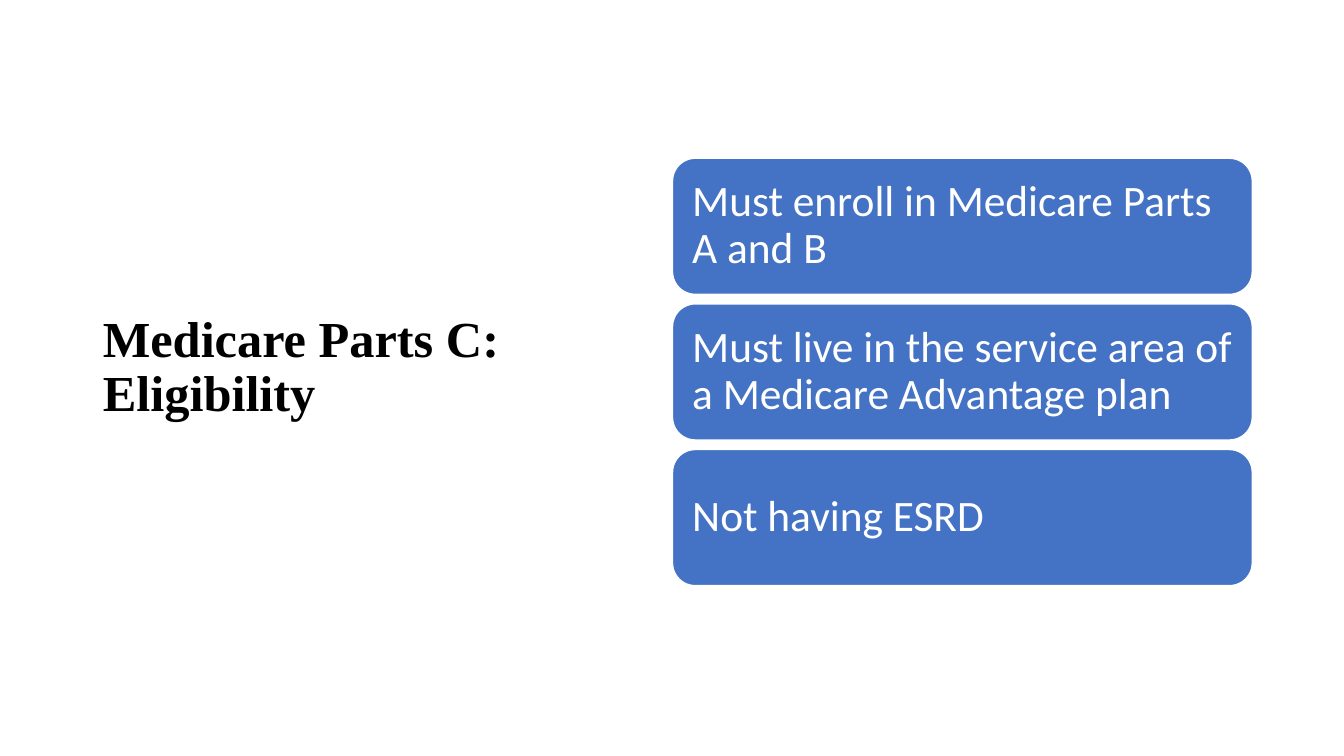
from pptx import Presentation
from pptx.dml.color import RGBColor
from pptx.enum.shapes import MSO_SHAPE
from pptx.enum.text import MSO_ANCHOR, MSO_AUTO_SIZE, PP_ALIGN
from pptx.util import Inches, Pt

BLACK = RGBColor(0x00, 0x00, 0x00)
WHITE = RGBColor(0xFF, 0xFF, 0xFF)
BLUE = RGBColor(0x44, 0x72, 0xC4)

REQUIREMENTS = [
    "Must enroll in Medicare Parts A and B",
    "Must live in the service area of a Medicare Advantage plan",
    "Not having ESRD",
]
CARD_LEFT, CARD_TOP = 6.67, 1.57
CARD_WIDTH, CARD_HEIGHT = 5.75, 1.35
CARD_PITCH = 1.445


def write_text(shape, text, *, font, size, color, bold=False):
    """Fill the shape with one left-aligned, vertically centred paragraph."""
    frame = shape.text_frame
    frame.word_wrap = True
    frame.auto_size = MSO_AUTO_SIZE.NONE
    frame.vertical_anchor = MSO_ANCHOR.MIDDLE
    paragraph = frame.paragraphs[0]
    paragraph.alignment = PP_ALIGN.LEFT
    paragraph.line_spacing = 0.9
    run = paragraph.add_run()
    run.text = text
    run.font.name = font
    run.font.size = Pt(size)
    run.font.bold = bold
    run.font.color.rgb = color


def place_title(slide, text):
    title = slide.shapes.title
    title.left, title.top = Inches(0.92), Inches(0.61)
    title.width, title.height = Inches(5.32), Inches(6.09)
    write_text(title, text, font="Times New Roman", size=36, color=BLACK, bold=True)


def add_requirement_card(slide, top, text):
    card = slide.shapes.add_shape(
        MSO_SHAPE.ROUNDED_RECTANGLE,
        Inches(CARD_LEFT), Inches(top), Inches(CARD_WIDTH), Inches(CARD_HEIGHT),
    )
    card.shadow.inherit = False
    card.fill.solid()
    card.fill.fore_color.rgb = BLUE
    card.line.color.rgb = WHITE
    card.line.width = Pt(1)
    frame = card.text_frame
    frame.margin_left = Inches(0.13)
    frame.margin_right = Inches(0.1)
    frame.margin_top = frame.margin_bottom = Inches(0.13)
    write_text(card, text, font="Calibri", size=31, color=WHITE)


def main():
    presentation = Presentation()
    presentation.slide_width = Inches(13.33)
    presentation.slide_height = Inches(7.5)
    title_only = presentation.slide_layouts.get_by_name("Title Only")
    slide = presentation.slides.add_slide(title_only)

    place_title(slide, "Medicare Parts C: Eligibility")
    for index, requirement in enumerate(REQUIREMENTS):
        add_requirement_card(slide, CARD_TOP + index * CARD_PITCH, requirement)

    presentation.save("out.pptx")


if __name__ == "__main__":
    main()
